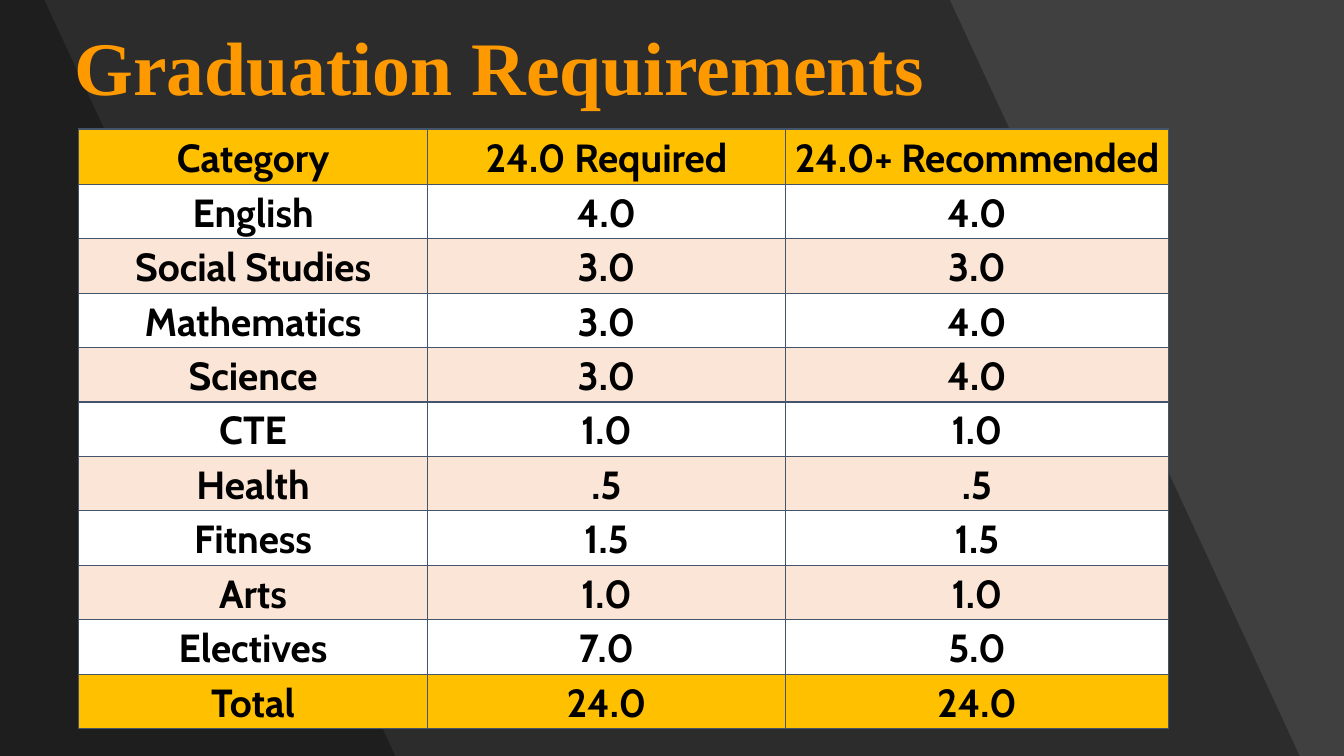
from lxml import etree
from pptx import Presentation
from pptx.dml.color import RGBColor
from pptx.enum.shapes import MSO_SHAPE
from pptx.enum.text import MSO_ANCHOR, PP_ALIGN
from pptx.oxml import parse_xml
from pptx.oxml.ns import nsdecls, qn
from pptx.util import Inches, Pt

WIDTH, HEIGHT = 13.33, 7.5
GOLD, WHITE, PEACH = "FFC000", "FFFFFF", "FBE5D6"
BORDER = "44546A"


def paint(shape, color):
    """Give a shape a plain fill with no line and no shadow."""
    shape.shadow.inherit = False
    shape.fill.solid()
    shape.fill.fore_color.rgb = RGBColor.from_string(color)
    shape.line.fill.background()


def add_text(para, text, size, font, color):
    span = para.add_run()
    span.text = text
    span.font.size = Pt(size)
    span.font.name = font
    span.font.bold = True
    span.font.color.rgb = RGBColor.from_string(color)


deck = Presentation()
deck.slide_width, deck.slide_height = Inches(WIDTH), Inches(HEIGHT)
page = deck.slides.add_slide(deck.slide_layouts[5])

# Background: grey with two slanted, see-through dark panels
backdrop = page.shapes.add_shape(
    MSO_SHAPE.RECTANGLE, 0, 0, Inches(WIDTH), Inches(HEIGHT))
paint(backdrop, "404040")
for top_right, bottom_right in [(9.42, 12.89), (0.44, 3.92)]:
    outline = page.shapes.build_freeform(0, 0)
    outline.add_line_segments([
        (Inches(top_right), 0),
        (Inches(bottom_right), Inches(HEIGHT)),
        (0, Inches(HEIGHT)),
    ], close=True)
    panel = outline.convert_to_shape()
    paint(panel, "000000")
    shade = panel.element.spPr.find(qn("a:solidFill")).find(qn("a:srgbClr"))
    etree.SubElement(shade, qn("a:alpha"), val="30000")

# Title, brought in front of the background
title = page.shapes.title
title.element.getparent().append(title.element)
title.left, title.top = Inches(0.64), Inches(0.25)
title.width, title.height = Inches(11.82), Inches(2.46)
title.text_frame.vertical_anchor = MSO_ANCHOR.TOP
title.text_frame.word_wrap = True
heading = title.text_frame.paragraphs[0]
heading.alignment = PP_ALIGN.LEFT
heading.line_spacing = 0.9
add_text(heading, "Graduation Requirements", 54, "Times New Roman", "FF9900")

# Credits table
credits = [
    ("Category", "24.0 Required", "24.0+ Recommended"),
    ("English", "4.0", "4.0"),
    ("Social Studies", "3.0", "3.0"),
    ("Mathematics", "3.0", "4.0"),
    ("Science", "3.0", "4.0"),
    ("CTE", "1.0", "1.0"),
    ("Health", ".5", ".5"),
    ("Fitness", "1.5", "1.5"),
    ("Arts", "1.0", "1.0"),
    ("Electives", "7.0", "5.0"),
    ("Total", "24.0", "24.0"),
]
last_row = len(credits) - 1
table = page.shapes.add_table(
    len(credits), 3, Inches(0.78), Inches(1.28), Inches(10.81), Inches(5.95)).table
for column, width in zip(table.columns, [3.46, 3.55, 3.8]):
    column.width = Inches(width)

for row_index, values in enumerate(credits):
    table.rows[row_index].height = Inches(0.54 if row_index else 0.55)
    if row_index in (0, last_row):
        row_color = GOLD
    else:
        row_color = WHITE if row_index % 2 else PEACH
    for column_index, value in enumerate(values):
        cell = table.cell(row_index, column_index)
        cell.vertical_anchor = MSO_ANCHOR.MIDDLE
        cell.margin_left = cell.margin_right = Inches(0.06)
        cell.margin_top = cell.margin_bottom = 0
        cell_format = cell._tc.get_or_add_tcPr()
        for side in ("lnL", "lnR", "lnT", "lnB"):
            cell_format.append(parse_xml(
                f'<a:{side} {nsdecls("a")} w="{Pt(1)}"><a:solidFill>'
                f'<a:srgbClr val="{BORDER}"/></a:solidFill></a:{side}>'))
        cell.fill.solid()
        cell.fill.fore_color.rgb = RGBColor.from_string(row_color)
        para = cell.text_frame.paragraphs[0]
        para.alignment = PP_ALIGN.CENTER
        para.line_spacing = 1.07
        add_text(para, value, 28, "Cabin", "000000")

deck.save("out.pptx")
